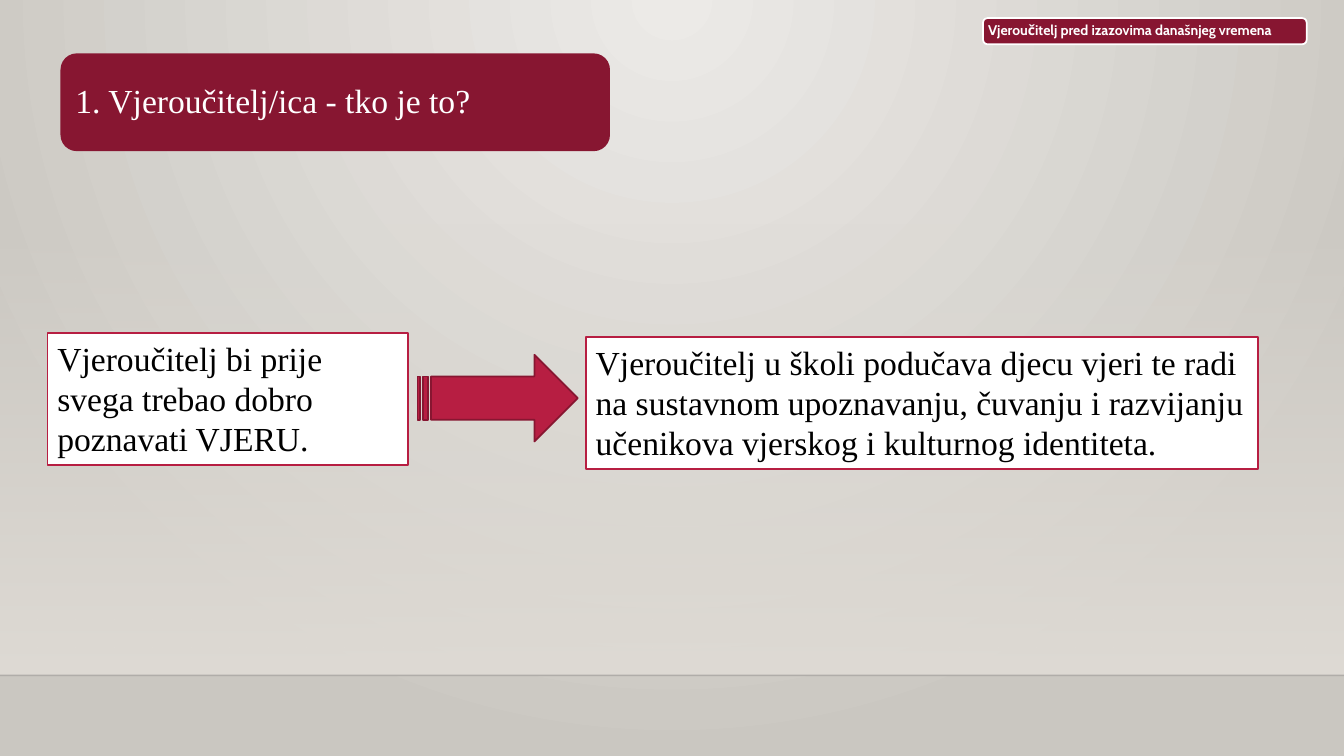
from lxml.etree import SubElement
from pptx import Presentation
from pptx.dml.color import RGBColor
from pptx.enum.shapes import MSO_CONNECTOR, MSO_SHAPE as SHAPE
from pptx.enum.text import MSO_ANCHOR as ANCHOR, MSO_AUTO_SIZE as FIT, PP_ALIGN
from pptx.oxml.ns import qn
from pptx.util import Inches, Pt

COLORS = {
    "wine": "871631", "crimson": "B71E42", "white": "FFFFFF", "black": "000000",
    "light": "ECEAE7", "dark": "CAC7C1", "wall": "DFDBD5", "edge": "000001",
}
SERIF = "Times New Roman"


def rgb(name):
    """Return the named colour."""
    return RGBColor.from_string(COLORS[name])


def set_alpha(parent, percent):
    """Set the opacity of the first colour inside an element."""
    color = next(parent.iter(qn("a:srgbClr")))
    SubElement(color, qn("a:alpha"), val=str(percent * 1000))


def set_gradient(fill, start, end):
    """Fill with a two-colour gradient."""
    fill.gradient()
    for stop, name, position in zip(fill.gradient_stops, (start, end), (0, 1)):
        stop.color.rgb = rgb(name)
        stop.position = position


def set_background(s):
    """Give the slide a circular gradient centred at the top."""
    set_gradient(s.background.fill, "light", "dark")
    grad = next(s._element.iter(qn("a:gradFill")))
    grad.remove(grad.find(qn("a:lin")))
    circle = SubElement(grad, qn("a:path"), path="circle")
    SubElement(circle, qn("a:fillToRect"), l="43000", t="0", r="43000", b="100000")


def add_box(s, kind, box, fill=None, line=None):
    """Add a shape with an optional plain fill and outline."""
    sp = s.shapes.add_shape(kind, *map(Inches, box))
    sp.shadow.inherit = False
    if fill:
        sp.fill.solid()
        sp.fill.fore_color.rgb = rgb(fill)
    if line:
        sp.line.color.rgb = rgb(line)
        sp.line.width = Pt(1.25)
    else:
        sp.line.fill.background()
    return sp


def write(sp, text, size, font, color, bold=False):
    """Write one left-aligned wrapped paragraph."""
    tf = sp.text_frame
    tf.word_wrap = True
    p = tf.paragraphs[0]
    p.text = text
    p.alignment = PP_ALIGN.LEFT
    p.font.size, p.font.name, p.font.bold = Pt(size), font, bold
    p.font.color.rgb = rgb(color)
    return tf


def add_wall(s):
    """Add the fading wall and the floor line."""
    wall = add_box(s, SHAPE.RECTANGLE, (0, 2.21, 13.33, 4.49))
    set_gradient(wall.fill, "wall", "wall")
    wall.fill.gradient_angle = 270
    set_alpha(wall._element, 0)
    floor = s.shapes.add_connector(
        MSO_CONNECTOR.STRAIGHT, Inches(0), Inches(6.7), Inches(13.33), Inches(6.7))
    floor.line.color.rgb = rgb("edge")
    floor.line.width = Pt(1)
    set_alpha(floor._element, 20)
    SubElement(floor._element.spPr, qn("a:effectLst"))


def add_statement(s, box, text):
    """Add a white framed box with a statement."""
    sp = add_box(s, SHAPE.RECTANGLE, box, "white", "crimson")
    tf = write(sp, text, 24, SERIF, "black")
    tf.vertical_anchor = ANCHOR.TOP
    tf.auto_size = FIT.SHAPE_TO_FIT_TEXT


def add_label(s, box, text_box, text, size, font, inset, line=None, bold=False):
    """Add a rounded wine panel with its text."""
    add_box(s, SHAPE.ROUNDED_RECTANGLE, box, "wine", line)
    tb = s.shapes.add_textbox(*map(Inches, text_box))
    tf = write(tb, text, size, font, "white", bold)
    tf.vertical_anchor = ANCHOR.MIDDLE
    tf.margin_left = tf.margin_right = Inches(inset)
    tf.margin_top = tf.margin_bottom = Inches(inset)
    tf.paragraphs[0].line_spacing = 0.9


def main():
    """Build the slide and save it."""
    prs = Presentation()
    prs.slide_width, prs.slide_height = Inches(13.33), Inches(7.5)
    s = prs.slides.add_slide(prs.slide_layouts[6])
    set_background(s)
    add_wall(s)
    add_statement(s, (0.47, 3.3, 3.58, 1.31),
                  "Vjeroučitelj bi prije svega trebao dobro poznavati VJERU.")
    add_statement(s, (5.81, 3.34, 6.67, 1.31),
                  "Vjeroučitelj u školi podučava djecu vjeri te radi na sustavnom "
                  "upoznavanju, čuvanju i razvijanju učenikova vjerskog i "
                  "kulturnog identiteta.")
    add_box(s, SHAPE.STRIPED_RIGHT_ARROW, (4.14, 3.52, 1.59, 0.86), "crimson", "wine")
    add_label(s, (9.75, 0.18, 3.21, 0.26), (9.76, 0.19, 3.18, 0.23),
              "Vjeroučitelj pred izazovima današnjeg vremena",
              10, "Cabin", 0.04, line="white", bold=True)
    add_label(s, (0.6, 0.53, 5.45, 0.97), (0.65, 0.58, 5.36, 0.88),
              "1. Vjeroučitelj/ica - tko je to?", 24, SERIF, 0.1)
    prs.save("out.pptx")


if __name__ == "__main__":
    main()
